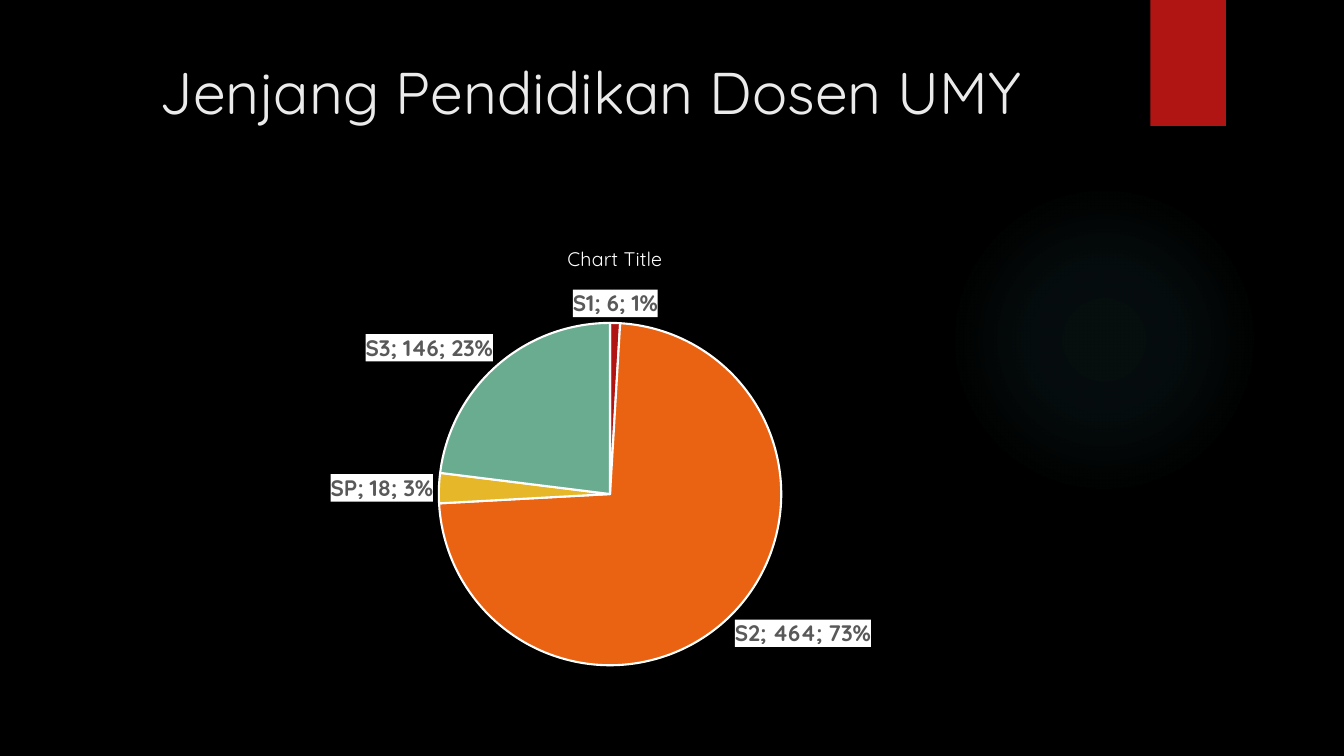
import pptx
import pptx.chart.data
import pptx.dml.color
import pptx.enum.chart
import pptx.enum.shapes
import pptx.enum.text
import pptx.oxml
import pptx.oxml.ns
import pptx.util
from pptx.dml.color import RGBColor
from pptx.util import Inches

FONT = "Quicksand"
BLACK = RGBColor(0x00, 0x00, 0x00)
WHITE = RGBColor(0xFF, 0xFF, 0xFF)
PALE = RGBColor(0xEB, 0xEB, 0xEB)
GRAY = RGBColor(0x59, 0x59, 0x59)
TEAL = RGBColor(0x50, 0xB9, 0xC1)
RED = RGBColor(0xB0, 0x15, 0x13)
ORANGE = RGBColor(0xEA, 0x63, 0x12)
GOLD = RGBColor(0xE6, 0xB7, 0x29)
GREEN = RGBColor(0x6A, 0xAC, 0x90)

DEGREES = [("S1", 6, RED), ("S2", 464, ORANGE), ("SP", 18, GOLD), ("S3", 146, GREEN)]


def parse(tag, body, attrs=""):
    spaces = pptx.oxml.ns.nsdecls("a", "c")
    return pptx.oxml.parse_xml(f"<{tag} {spaces} {attrs}>{body}</{tag}>")


def style(font, size, color, bold=False):
    font.name = FONT
    font.size = pptx.util.Pt(size)
    font.bold = bold
    font.color.rgb = color


def add_block(slide, kind, box, color):
    shape = slide.shapes.add_shape(kind, *map(Inches, box))
    shape.shadow.inherit = False
    shape.fill.solid()
    shape.fill.fore_color.rgb = color
    shape.line.fill.background()
    return shape


def add_glow(slide, box, color, stops):
    shape = add_block(slide, pptx.enum.shapes.MSO_SHAPE.OVAL, box, color)
    marks = "".join(
        f'<a:gs pos="{spot * 1000}"><a:srgbClr val="{color}">'
        f'<a:alpha val="{alpha * 1000}"/></a:srgbClr></a:gs>'
        for spot, alpha in stops
    )
    center = '<a:fillToRect l="50000" t="50000" r="50000" b="50000"/>'
    body = f'<a:gsLst>{marks}</a:gsLst><a:path path="circle">{center}</a:path>'
    props = shape._element.spPr
    solid = props.find(pptx.oxml.ns.qn("a:solidFill"))
    props.replace(solid, parse("a:gradFill", body, 'rotWithShape="1"'))


def add_title(slide, text, box):
    frame = slide.shapes.add_textbox(*map(Inches, box)).text_frame
    frame.word_wrap = True
    frame.text = text
    line = frame.paragraphs[0]
    line.alignment = pptx.enum.text.PP_ALIGN.CENTER
    style(line.runs[0].font, 42, PALE)


def set_plot(chart, left, top, width, height):
    parts = {"x": left, "y": top, "w": width, "h": height}
    body = '<c:layoutTarget val="inner"/><c:xMode val="edge"/><c:yMode val="edge"/>'
    body += "".join(f'<c:{key} val="{val}"/>' for key, val in parts.items())
    area = chart._chartSpace.chart.plotArea
    for old in area.findall(pptx.oxml.ns.qn("c:layout")):
        area.remove(old)
    area.insert(0, parse("c:layout", f"<c:manualLayout>{body}</c:manualLayout>"))


def set_labels(series):
    labels = series.data_labels
    style(labels.font, 16, GRAY, True)
    labels.position = pptx.enum.chart.XL_LABEL_POSITION.OUTSIDE_END
    labels.show_category_name = True
    labels.show_value = True
    labels.show_percentage = True
    root = labels._element
    fill = f'<a:solidFill><a:srgbClr val="{WHITE}"/></a:solidFill>'
    root.find(pptx.oxml.ns.qn("c:txPr")).addprevious(parse("c:spPr", fill))
    last = root.find(pptx.oxml.ns.qn("c:showBubbleSize"))
    if last is None:
        last = root.find(pptx.oxml.ns.qn("c:showPercent"))
    last.addnext(parse("c:separator", "; "))


def add_pie(slide, rows, box):
    data = pptx.chart.data.CategoryChartData()
    data.categories = [name for name, _, _ in rows]
    data.add_series("Series 1", [count for _, count, _ in rows])
    kind = pptx.enum.chart.XL_CHART_TYPE.PIE
    chart = slide.shapes.add_chart(kind, *map(Inches, box), data).chart
    style(chart.font, 10, WHITE)
    chart.has_legend = False
    chart.has_title = True
    frame = chart.chart_title.text_frame
    frame.text = "Chart Title"
    style(frame.paragraphs[0].runs[0].font, 14, WHITE)
    set_plot(chart, 0.32, 0.21, 0.35, 0.74)
    series = chart.plots[0].series[0]
    for place, (_, _, color) in enumerate(rows):
        form = series.points[place].format
        form.fill.solid()
        form.fill.fore_color.rgb = color
        form.line.color.rgb = WHITE
        form.line.width = pptx.util.Pt(1.5)
    set_labels(series)


def main():
    deck = pptx.Presentation()
    deck.slide_width = Inches(13.33)
    deck.slide_height = Inches(7.5)
    slide = deck.slides.add_slide(deck.slide_layouts[6])
    slide.background.fill.solid()
    slide.background.fill.fore_color.rgb = BLACK
    add_glow(slide, (9.41, 1.83, 3.08, 3.08), TEAL, [(0, 7), (36, 6), (69, 0)])
    add_block(slide, pptx.enum.shapes.MSO_SHAPE.RECTANGLE, (11.41, 0, 0.75, 1.25), RED)
    add_title(slide, "Jenjang Pendidikan Dosen UMY", (0.71, 0.5, 10.29, 1.53))
    add_pie(slide, DEGREES, (1.21, 2.24, 9.78, 4.59))
    deck.save("out.pptx")


if __name__ == "__main__":
    main()
